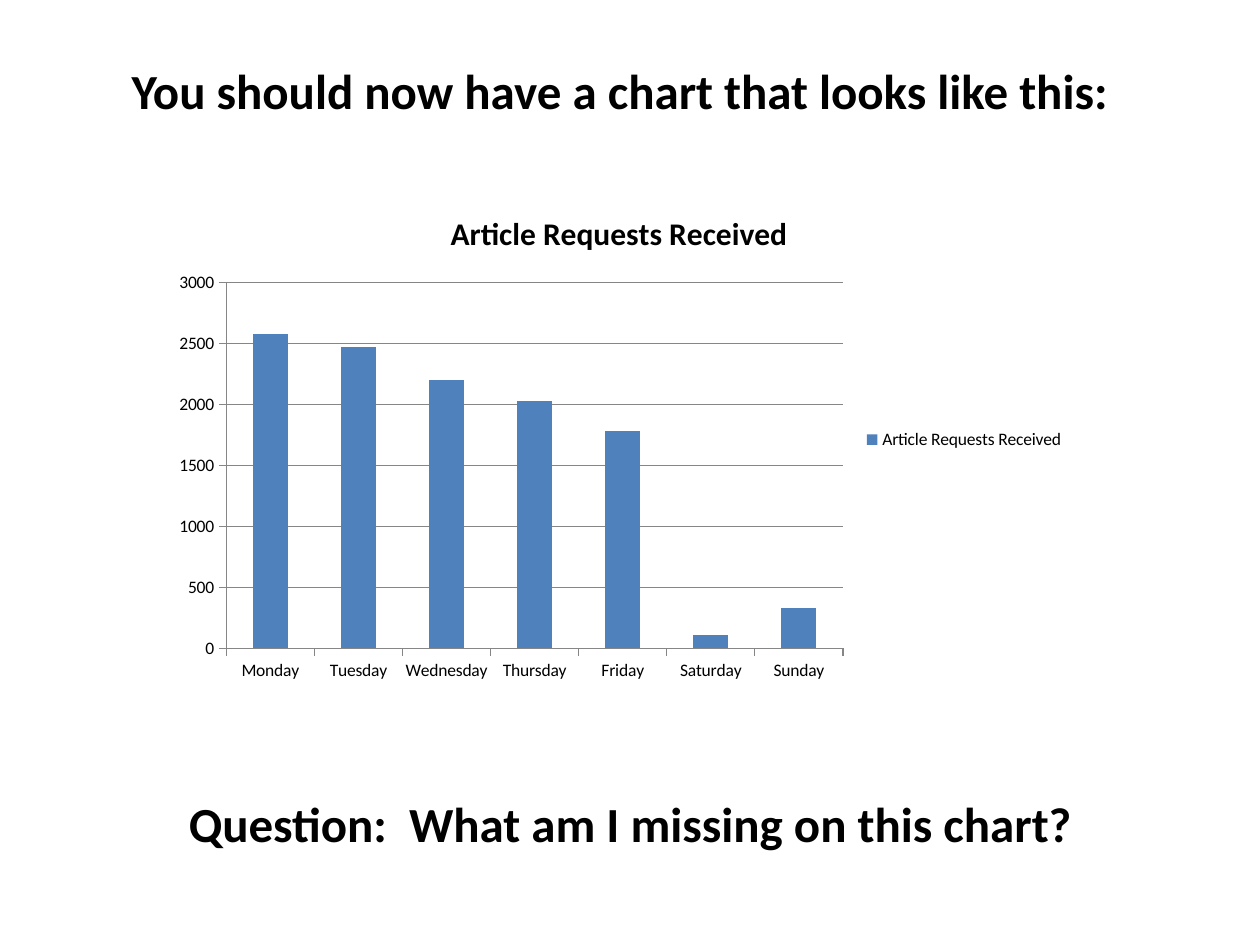
from pptx import Presentation
from pptx.chart.data import CategoryChartData
from pptx.dml.color import RGBColor
from pptx.enum.chart import XL_CHART_TYPE, XL_LEGEND_POSITION, XL_TICK_MARK
from pptx.enum.text import PP_ALIGN
from pptx.util import Pt

BLACK = RGBColor(0x00, 0x00, 0x00)
BLUE = RGBColor(0x4F, 0x81, 0xBD)
GRAY = RGBColor(0x86, 0x86, 0x86)
FONT = "Calibri"
CENTER = PP_ALIGN.CENTER
COLUMN_CLUSTERED = XL_CHART_TYPE.COLUMN_CLUSTERED
LEGEND_RIGHT = XL_LEGEND_POSITION.RIGHT
TICK_OUTSIDE = XL_TICK_MARK.OUTSIDE


def style_font(font, size, bold=False):
    font.name = FONT
    font.size = Pt(size)
    font.bold = bold
    font.color.rgb = BLACK


presentation = Presentation()
presentation.slide_width = Pt(720)
presentation.slide_height = Pt(540)
slide = presentation.slides.add_slide(presentation.slide_layouts[6])

# Heading and question
for text, left, top, width in (
    ("You should now have a chart that looks like this:", 66, 31, 576),
    ("Question:  What am I missing on this chart?", 24, 450, 672),
):
    text_box = slide.shapes.add_textbox(Pt(left), Pt(top), Pt(width), Pt(41))
    text_frame = text_box.text_frame
    text_frame.word_wrap = True
    text_frame.text = text
    paragraph = text_frame.paragraphs[0]
    paragraph.alignment = CENTER
    style_font(paragraph.runs[0].font, 28, bold=True)

# Column chart of requests per weekday
requests = {
    "Monday": 2580,
    "Tuesday": 2470,
    "Wednesday": 2200,
    "Thursday": 2030,
    "Friday": 1780,
    "Saturday": 110,
    "Sunday": 330,
}
chart_data = CategoryChartData()
chart_data.categories = list(requests)
chart_data.add_series("Article Requests Received", list(requests.values()))
chart = slide.shapes.add_chart(
    COLUMN_CLUSTERED, Pt(92), Pt(108), Pt(523.5), Pt(286.5), chart_data
).chart
style_font(chart.font, 10)

plot = chart.plots[0]
plot.gap_width = 150
plot.vary_by_categories = False
series_fill = plot.series[0].format.fill
series_fill.solid()
series_fill.fore_color.rgb = BLUE

# Chart title and legend
chart.has_title = True
title_frame = chart.chart_title.text_frame
title_frame.text = "Article Requests Received"
style_font(title_frame.paragraphs[0].runs[0].font, 18, bold=True)
chart.chart_title.include_in_layout = False
chart.has_legend = True
chart.legend.position = LEGEND_RIGHT
chart.legend.include_in_layout = False

# Axes and gridlines
value_axis = chart.value_axis
value_axis.minimum_scale = 0
value_axis.maximum_scale = 3000
value_axis.major_unit = 500
value_axis.has_major_gridlines = True
for axis in (chart.category_axis, value_axis):
    axis.major_tick_mark = TICK_OUTSIDE
for part in (chart.category_axis, value_axis, value_axis.major_gridlines):
    part.format.line.color.rgb = GRAY
    part.format.line.width = Pt(0.75)

presentation.save("out.pptx")
